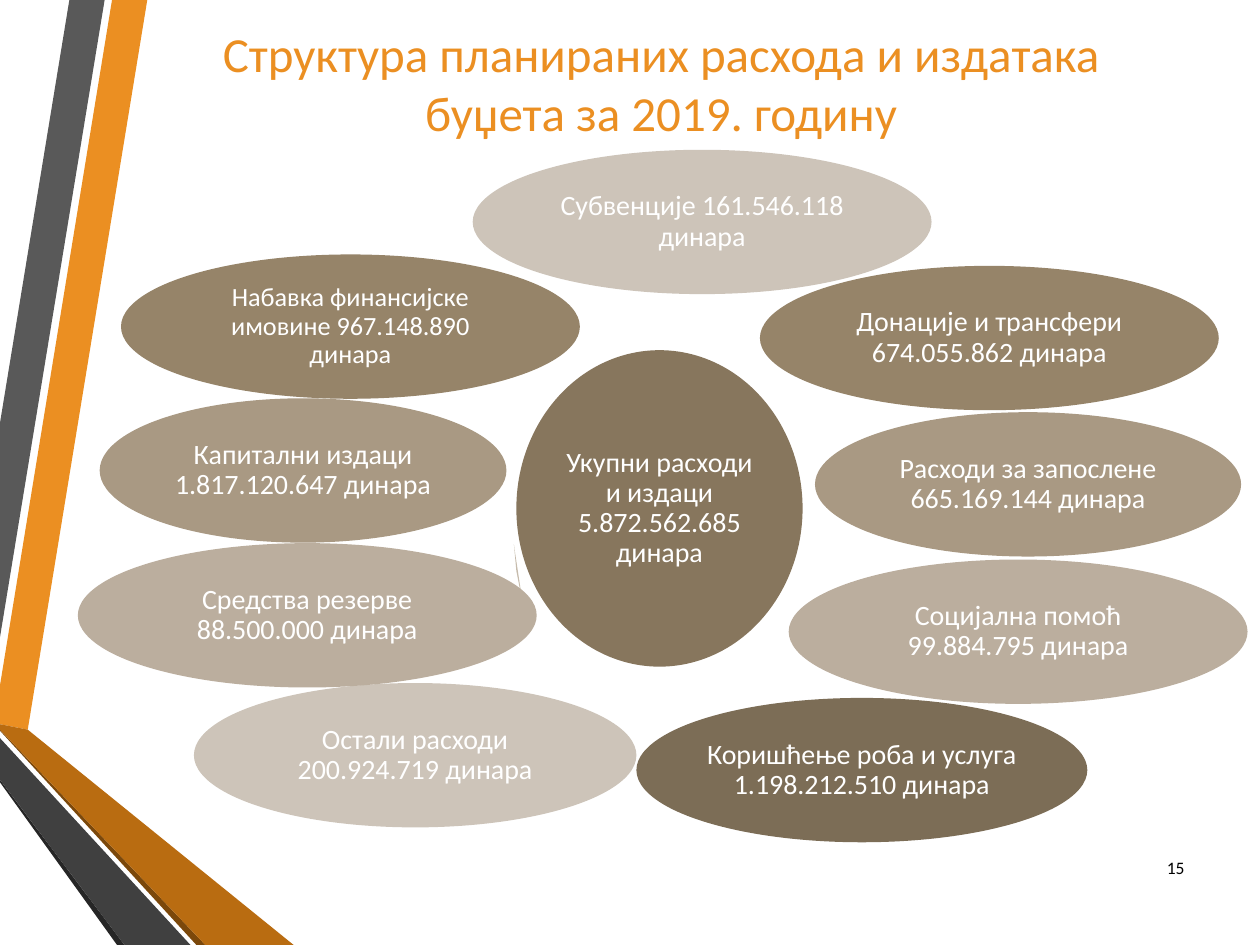
from pptx import Presentation
from pptx import util as u
from pptx.dml.color import RGBColor
from pptx.enum import shapes, text

FONT = "Calibri"
WHITE = RGBColor(0xFF, 0xFF, 0xFF)
BLACK = RGBColor(0x00, 0x00, 0x00)
ORANGE = RGBColor(0xEB, 0x8F, 0x22)
RUST = RGBColor(0xB9, 0x6C, 0x11)
DARK_RUST = RGBColor(0x7B, 0x48, 0x0B)
GREY = RGBColor(0x59, 0x59, 0x59)
CHARCOAL = RGBColor(0x40, 0x40, 0x40)
COAL = RGBColor(0x26, 0x26, 0x26)
HUB = RGBColor(0x87, 0x76, 0x5D)
BROWN_1 = RGBColor(0x7C, 0x6D, 0x56)
BROWN_2 = RGBColor(0x96, 0x84, 0x69)
BROWN_3 = RGBColor(0xA9, 0x99, 0x83)
BROWN_4 = RGBColor(0xBB, 0xAE, 0x9E)
BROWN_5 = RGBColor(0xCD, 0xC4, 0xB9)
SLIVER = RGBColor(0xC6, 0xBB, 0xAC)

RIBBONS = [
    (ORANGE, [(0, 13.82), (0, 14.6), (0.56, 14.71), (2.97, 0), (2.26, 0)]),
    (GREY, [(2.11, 0), (1.4, 0), (0, 8.53), (0, 12.85)]),
    (COAL, [(0, 15.72), (0, 15.77), (2.36, 19.05), (2.51, 19.05)]),
    (DARK_RUST, [(0, 14.71), (0, 14.73), (3.96, 19.05), (4.14, 19.05)]),
    (RUST, [(0, 14.71), (4.14, 19.05), (5.92, 19.05), (0.56, 14.71), (0, 14.6)]),
    (CHARCOAL, [(0, 15.72), (2.51, 19.05), (3.84, 19.05), (0, 14.88)]),
]

OVAL_HEIGHT = 2.91
WIDE = 9.25
RIGHT_OVALS = [
    ("Коришћење роба и услуга 1.198.212.510 динара", 11.26, 11.05, 9.09, BROWN_1, 16),
    ("Донације и трансфери 674.055.862 динара", 13.75, 2.34, WIDE, BROWN_2, 16),
    ("Расходи за запослене 665.169.144 динара", 14.86, 5.29, 8.59, BROWN_3, 16),
    ("Социјална помоћ 99.884.795 динара", 14.33, 8.26, WIDE, BROWN_4, 16),
    ("Субвенције 161.546.118 динара", 7.96, 0, WIDE, BROWN_5, 16),
    ("Остали расходи 200.924.719 динара", 2.34, 10.75, 8.92, BROWN_5, 16),
]
LEFT_OVALS = [
    ("Средства резерве 88.500.000 динара", 0, 7.93, WIDE, BROWN_4, 16),
    ("Капитални издаци 1.817.120.647 динара", 0.44, 5.01, 8.2, BROWN_3, 16),
    ("Набавка финансијске имовине 967.148.890 динара", 0.87, 2.11, WIDE, BROWN_2, 15),
]
SLIVER_POINTS = [(8.79, 7.95), (8.84, 8.49), (8.95, 9.05), (8.92, 8.82), (8.82, 8.16)]


def paint(shape, color):
    """Give a shape a flat fill without line or shadow."""
    shape.fill.solid()
    shape.fill.fore_color.rgb = color
    shape.line.fill.background()
    shape.shadow.inherit = False


def write(shape, wording, size, color, align):
    """Set one paragraph of text in a shape and format it."""
    frame = shape.text_frame
    frame.text = wording
    frame.word_wrap = True
    frame.auto_size = text.MSO_AUTO_SIZE.NONE
    frame.vertical_anchor = text.MSO_ANCHOR.MIDDLE
    para = frame.paragraphs[0]
    para.alignment = align
    span = para.runs[0]
    span.font.name = FONT
    span.font.size = u.Pt(size)
    span.font.color.rgb = color


def add_polygon(page, box, points, color):
    """Draw a closed polygon whose points are relative to the box."""
    left, top = box[:2]
    corners = [(u.Cm(left + x), u.Cm(top + y)) for x, y in points]
    builder = page.shapes.build_freeform(*corners[0])
    builder.add_line_segments(corners[1:], close=True)
    paint(builder.convert_to_shape(), color)


def add_oval(page, box, wording, color, size):
    """Draw a filled ellipse with centred white text."""
    oval = page.shapes.add_shape(shapes.MSO_SHAPE.OVAL, *map(u.Cm, box))
    paint(oval, color)
    write(oval, wording, size, WHITE, text.PP_ALIGN.CENTER)
    frame = oval.text_frame
    frame.margin_left = frame.margin_right = u.Cm(0.06)
    frame.margin_top = frame.margin_bottom = u.Cm(0.06)
    frame.paragraphs[0].line_spacing = 0.9


def add_ribbons(page, box):
    """Draw the folded ribbons along the left edge."""
    for color, points in RIBBONS:
        add_polygon(page, box, points, color)


def add_title(page, box):
    """Place and format the title placeholder."""
    title = page.shapes.title
    title.left, title.top, title.width, title.height = map(u.Cm, box)
    write(title, "Структура планираних расхода и издатака буџета за 2019. годину",
          28, ORANGE, text.PP_ALIGN.CENTER)


def add_expense_diagram(page, box):
    """Draw the total in the middle and the expense ovals around it."""
    left, top = box[:2]

    def add_group(ovals):
        """Draw a list of expense ovals."""
        for wording, x, y, width, color, size in ovals:
            place = (left + x, top + y, width, OVAL_HEIGHT)
            add_oval(page, place, wording, color, size)

    add_oval(page, (left + 8.84, top + 4.04, 5.77, 6.38),
             "Укупни расходи и издаци 5.872.562.685 динара", HUB, 16)
    add_group(RIGHT_OVALS)
    add_polygon(page, box, SLIVER_POINTS, SLIVER)
    add_group(LEFT_OVALS)


def add_page_number(page, box):
    """Write the page number."""
    number = page.shapes.add_textbox(*map(u.Cm, box))
    write(number, "15", 10, BLACK, text.PP_ALIGN.RIGHT)


def main():
    """Build the slide and save the deck."""
    deck = Presentation()
    deck.slide_width, deck.slide_height = u.Cm(25.4), u.Cm(19.05)
    page = deck.slides.add_slide(deck.slide_layouts[5])
    add_ribbons(page, (0, 0, 5.92, 19.05))
    add_title(page, (2.9, 0.48, 20.85, 2.36))
    add_expense_diagram(page, (1.57, 3.02, 23.6, 13.96))
    add_page_number(page, (22.94, 16.97, 1.19, 1.02))
    deck.save("out.pptx")


if __name__ == "__main__":
    main()
